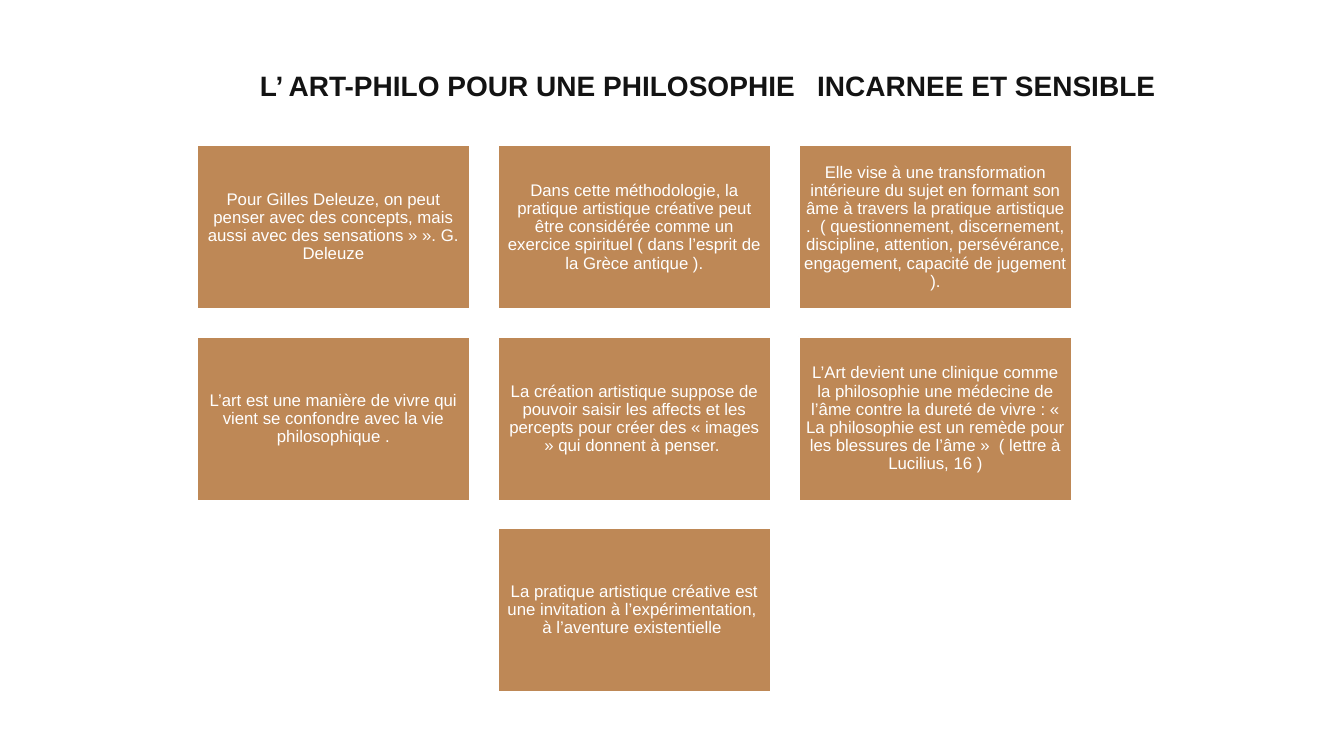
from lxml.etree import SubElement
from pptx import Presentation
from pptx.dml.color import RGBColor
from pptx.enum.shapes import MSO_SHAPE
from pptx.enum.text import MSO_ANCHOR, PP_ALIGN
from pptx.oxml.ns import qn
from pptx.util import Pt

BROWN = RGBColor(0xBE, 0x88, 0x56)
WHITE = RGBColor(0xFF, 0xFF, 0xFF)
BLACK = RGBColor(0x13, 0x13, 0x13)

LEFT, TOP = 140.6, 103.7
WIDE, HIGH = 195.1, 117.4
STEP_X, STEP_Y = 215, 136.8
COLS = 3

TITLE = "L’ ART-PHILO POUR UNE PHILOSOPHIE\tINCARNEE ET SENSIBLE"
TITLE_TAB = 398

CARDS = [
    "Pour Gilles Deleuze, on peut penser avec des concepts, mais aussi avec "
    "des sensations » ». G. Deleuze",
    "Dans cette méthodologie, la pratique artistique créative peut être "
    "considérée comme un exercice spirituel ( dans l’esprit de la Grèce "
    "antique ).",
    "Elle vise à une transformation intérieure du sujet en formant son âme à "
    "travers la pratique artistique .  ( questionnement, discernement, "
    "discipline, attention, persévérance, engagement, capacité de jugement ).",
    "L’art est une manière de vivre qui vient se confondre avec la vie "
    "philosophique .",
    "La création artistique suppose de pouvoir saisir les affects et les "
    "percepts pour créer des « images » qui donnent à penser. ",
    "L’Art devient une clinique comme la philosophie une médecine de l’âme "
    "contre la dureté de vivre : « La philosophie est un remède pour les "
    "blessures de l’âme »  ( lettre à Lucilius, 16 )",
    "La pratique artistique créative est une invitation à l’expérimentation,  "
    "à l’aventure existentielle ",
]

TITLE_FONT = {"name": "Arial", "size": Pt(20), "bold": True}
CARD_FONT = {"name": "Arial", "size": Pt(12), "bold": False}


def write(shape, text, font, color, align, anchor, inset):
    """Put one paragraph of formatted text in the shape."""
    frame = shape.text_frame
    layout = {"word_wrap": True, "vertical_anchor": anchor}
    for side in ("left", "top", "right", "bottom"):
        layout["margin_" + side] = Pt(inset)
    for key, value in layout.items():
        setattr(frame, key, value)
    para = frame.paragraphs[0]
    para.alignment = align
    para.line_spacing = 0.9
    run = para.add_run()
    run.text = text
    for key, value in font.items():
        setattr(run.font, key, value)
    run.font.color.rgb = color
    return para


deck = Presentation()
deck.slide_width, deck.slide_height = Pt(960), Pt(540)
slide = deck.slides.add_slide(deck.slide_layouts[6])

title = slide.shapes.add_textbox(Pt(182.1), Pt(36), Pt(690), Pt(41))
para = write(title, TITLE, TITLE_FONT, BLACK,
             PP_ALIGN.LEFT, MSO_ANCHOR.BOTTOM, 3.6)
tabs = SubElement(para._p.get_or_add_pPr(), qn("a:tabLst"))
SubElement(tabs, qn("a:tab"), pos=str(Pt(TITLE_TAB)), algn="l")

for index, text in enumerate(CARDS):
    row, col = divmod(index, COLS)
    if index == len(CARDS) - 1:
        col = 1  # the last card stands alone, centred
    card = slide.shapes.add_shape(
        MSO_SHAPE.RECTANGLE, Pt(LEFT + col * STEP_X), Pt(TOP + row * STEP_Y),
        Pt(WIDE), Pt(HIGH))
    card.shadow.inherit = False
    card.fill.solid()
    card.fill.fore_color.rgb = BROWN
    card.line.color.rgb = WHITE
    card.line.width = Pt(1.5)
    write(card, text, CARD_FONT, WHITE,
          PP_ALIGN.CENTER, MSO_ANCHOR.MIDDLE, 3.6)

deck.save("out.pptx")
